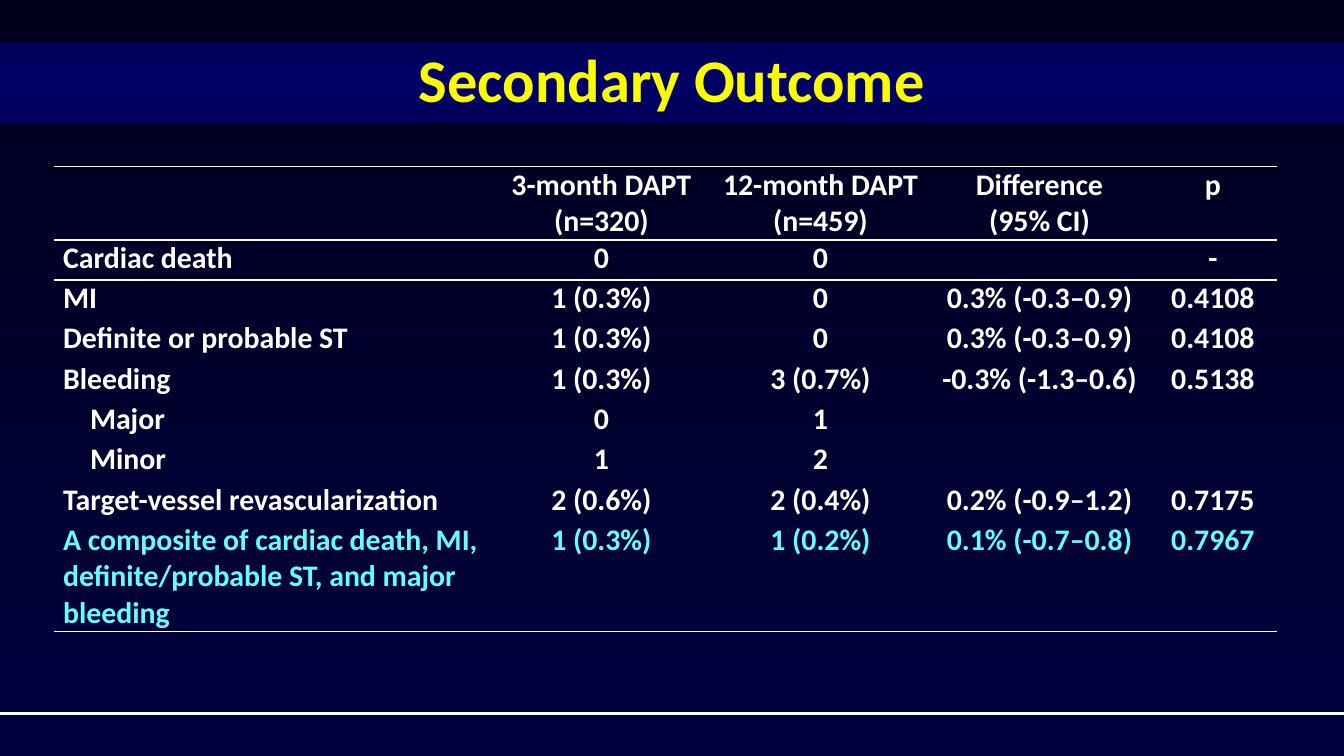
from dataclasses import dataclass

from lxml import etree
from pptx import Presentation
from pptx.dml.color import RGBColor
from pptx.enum.shapes import MSO_CONNECTOR
from pptx.enum.text import MSO_ANCHOR, PP_ALIGN
from pptx.oxml.ns import qn
from pptx.util import Inches, Pt

STRAIGHT = MSO_CONNECTOR.STRAIGHT
MIDDLE = MSO_ANCHOR.MIDDLE
LEFT = PP_ALIGN.LEFT
CENTER = PP_ALIGN.CENTER

NO_TABLE_STYLE = "{2D5ABB26-0587-4C30-8999-92F81FD0307C}"
TITLE = "Secondary Outcome"
COLUMN_WIDTHS = [3.26, 1.63, 1.63, 1.63, 0.95]
ROW_HEIGHTS = [0.54] + [0.3] * 7 + [0.81]
RULED_ROWS = {0, 1, 8}
INDENTED_ROWS = {5, 6}
HIGHLIGHTED_ROW = 8
OUTCOMES = [
    ["", "3-month DAPT\n(n=320)", "12-month DAPT\n(n=459)", "Difference\n(95% CI)", "p"],
    ["Cardiac death", "0", "0", "", "-"],
    ["MI", "1 (0.3%)", "0", "0.3% (-0.3–0.9)", "0.4108"],
    ["Definite or probable ST", "1 (0.3%)", "0", "0.3% (-0.3–0.9)", "0.4108"],
    ["Bleeding", "1 (0.3%)", "3 (0.7%)", "-0.3% (-1.3–0.6)", "0.5138"],
    ["Major", "0", "1", "", ""],
    ["Minor", "1", "2", "", ""],
    ["Target-vessel revascularization", "2 (0.6%)", "2 (0.4%)", "0.2% (-0.9–1.2)", "0.7175"],
    ["A composite of cardiac death, MI, definite/probable ST, and major bleeding",
     "1 (0.3%)", "1 (0.2%)", "0.1% (-0.7–0.8)", "0.7967"],
]


@dataclass(frozen=True)
class Theme:
    """Colours, font and type sizes of the slide."""
    font: str = "Calibri"
    title_size: float = 32.4
    table_size: float = 16
    rule_width: float = 1
    footer_width: float = 1.75
    title: str = "FAFD00"
    text: str = "FFFFFF"
    highlight: str = "66FFFF"
    background: tuple = ("00001D", "00003E")
    banner: tuple = ("000057", "000066", "000057")


def write_text(frame, text, *, theme, size, color, align=CENTER, spacing=None, indent=0):
    """Write one formatted paragraph for each line of text."""
    for index, line in enumerate(text.split("\n")):
        paragraph = frame.paragraphs[0] if index == 0 else frame.add_paragraph()
        paragraph.alignment = align
        if spacing:
            paragraph.line_spacing = spacing
        if indent:
            paragraph._p.get_or_add_pPr().set("marL", str(Inches(indent)))
        if not line:
            etree.SubElement(paragraph._p, qn("a:endParaRPr"), sz=str(int(size * 100)))
            continue
        run = paragraph.add_run()
        run.text = line
        run.font.name = theme.font
        run.font.size = Pt(size)
        run.font.bold = True
        run.font.color.rgb = RGBColor.from_string(color)


def fill_gradient(fill, element, colors):
    """Fill from top to bottom with evenly spaced colours."""
    fill.gradient()
    fill.gradient_angle = 270
    stops = element.find(".//" + qn("a:gsLst"))
    for stop in list(stops):
        stops.remove(stop)
    for index, color in enumerate(colors):
        position = 100000 * index // (len(colors) - 1)
        stop = etree.SubElement(stops, qn("a:gs"), pos=str(position))
        etree.SubElement(stop, qn("a:srgbClr"), val=color)


def set_border(cell, side, color, width):
    """Draw one cell border, or clear it when the colour is None."""
    properties = cell._tc.get_or_add_tcPr()
    line = etree.SubElement(properties, qn(f"a:ln{side}"), w=str(Pt(width)))
    if color is None:
        etree.SubElement(line, qn("a:noFill"))
    else:
        fill = etree.SubElement(line, qn("a:solidFill"))
        etree.SubElement(fill, qn("a:srgbClr"), val=color)


class SlideBuilder:
    """Adds styled elements to the current slide."""

    def __init__(self, slide, theme):
        self.slide = slide
        self.theme = theme

    def background(self):
        """Paint the slide background."""
        fill_gradient(self.slide.background.fill, self.slide._element, self.theme.background)

    def rule(self, top, width):
        """Draw a horizontal line from the left edge."""
        line = self.slide.shapes.add_connector(
            STRAIGHT, Inches(0), Inches(top), Inches(width), Inches(top))
        line.line.color.rgb = RGBColor.from_string(self.theme.text)
        line.line.width = Pt(self.theme.footer_width)
        etree.SubElement(line._element.spPr, qn("a:effectLst"))

    def title(self, text, left, top, width, height):
        """Place the title on its banner."""
        shape = self.slide.shapes.title
        shape.left, shape.top = Inches(left), Inches(top)
        shape.width, shape.height = Inches(width), Inches(height)
        fill_gradient(shape.fill, shape._element, self.theme.banner)
        shape.text_frame.vertical_anchor = MIDDLE
        write_text(shape.text_frame, text, theme=self.theme, size=self.theme.title_size,
                   color=self.theme.title, spacing=0.9)

    def table(self, rows, left, top):
        """Add the outcome table."""
        frame = self.slide.shapes.add_table(
            len(rows), len(COLUMN_WIDTHS), Inches(left), Inches(top),
            Inches(sum(COLUMN_WIDTHS)), Inches(sum(ROW_HEIGHTS)))
        table = frame.table
        table.horz_banding = False
        table.first_row = False
        table._tbl.tblPr.find(qn("a:tableStyleId")).text = NO_TABLE_STYLE
        for column, width in zip(table.columns, COLUMN_WIDTHS):
            column.width = Inches(width)
        for row, height in zip(table.rows, ROW_HEIGHTS):
            row.height = Inches(height)
        for row_index, values in enumerate(rows):
            for column_index, text in enumerate(values):
                self.cell(table.cell(row_index, column_index), text, row_index, column_index)

    def cell(self, cell, text, row, column):
        """Format and fill one table cell."""
        cell.margin_left = cell.margin_right = Inches(0.07)
        cell.margin_top = cell.margin_bottom = 0
        ruled = {"L": False, "R": False, "T": row == 0 or row - 1 in RULED_ROWS,
                 "B": row in RULED_ROWS}
        for side, visible in ruled.items():
            set_border(cell, side, self.theme.text if visible else None, self.theme.rule_width)
        cell.fill.background()
        is_label = column == 0
        write_text(cell.text_frame, text, theme=self.theme, size=self.theme.table_size,
                   color=self.theme.highlight if row == HIGHLIGHTED_ROW else self.theme.text,
                   align=LEFT if is_label else CENTER,
                   indent=0.2 if is_label and row in INDENTED_ROWS else 0)


def main():
    """Build and save the presentation."""
    presentation = Presentation()
    presentation.slide_width = Inches(10)
    presentation.slide_height = Inches(10 * 9 / 16)
    slide = presentation.slides.add_slide(presentation.slide_layouts.get_by_name("Title Only"))
    builder = SlideBuilder(slide, Theme())
    builder.background()
    builder.rule(5.31, 10)
    builder.title(TITLE, 0, 0.31, 10, 0.61)
    builder.table(OUTCOMES, 0.4, 1.24)
    presentation.save("out.pptx")


if __name__ == "__main__":
    main()
